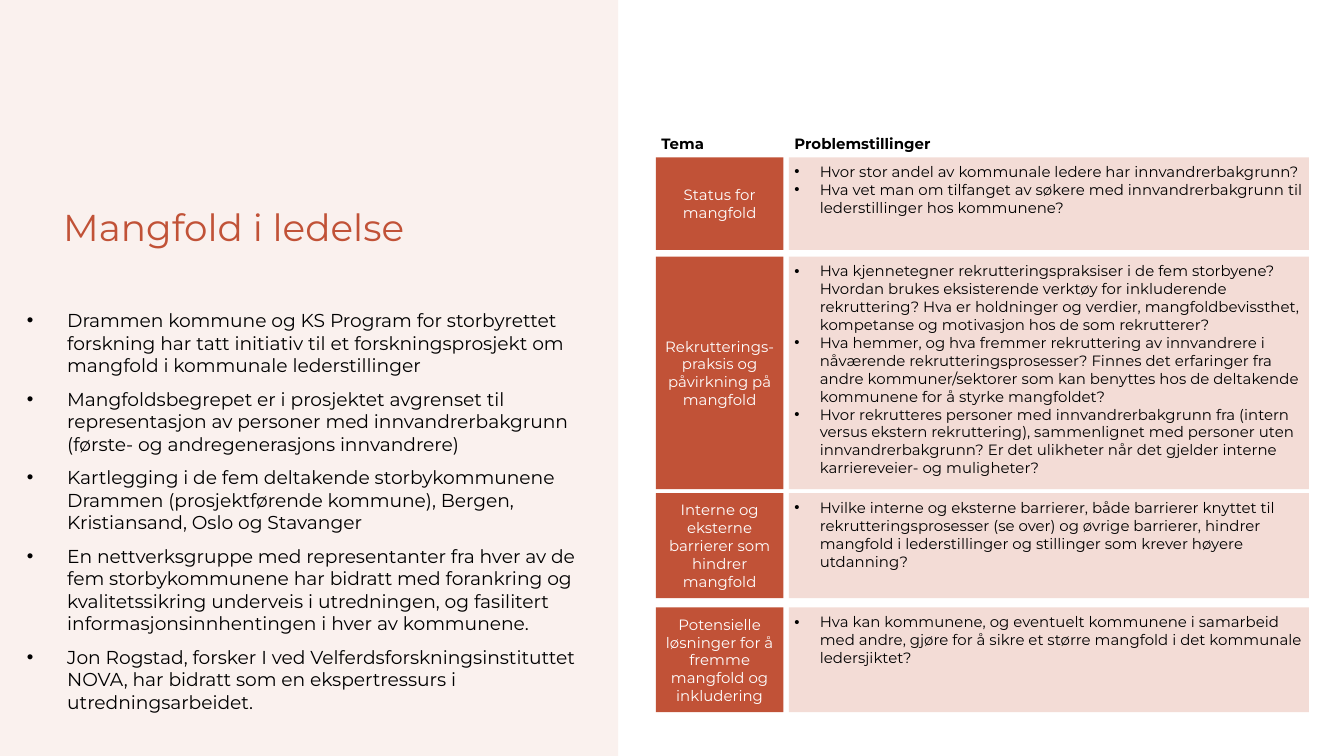
from lxml import etree
from pptx import Presentation
from pptx.dml.color import RGBColor
from pptx.enum.shapes import MSO_SHAPE
from pptx.enum.text import MSO_ANCHOR, PP_ALIGN
from pptx.oxml.ns import qn
from pptx.util import Inches, Pt

RECTANGLE = MSO_SHAPE.RECTANGLE
TOP, MIDDLE = MSO_ANCHOR.TOP, MSO_ANCHOR.MIDDLE
LEFT, CENTER = PP_ALIGN.LEFT, PP_ALIGN.CENTER
FONT = "Montserrat"
RUST, BLUSH, BLACK, WHITE = "C15237", "F3DCD6", "000000", "FFFFFF"

TITLE = "Mangfold i ledelse"
POINTS = [
    "Drammen kommune og KS Program for storbyrettet forskning har tatt initiativ til et "
    "forskningsprosjekt om mangfold i kommunale lederstillinger",
    "Mangfoldsbegrepet er i prosjektet avgrenset til representasjon av personer med "
    "innvandrerbakgrunn (første- og andregenerasjons innvandrere)",
    "Kartlegging i de fem deltakende storbykommunene Drammen (prosjektførende kommune), "
    "Bergen, Kristiansand, Oslo og Stavanger",
    "En nettverksgruppe med representanter fra hver av de fem storbykommunene har bidratt "
    "med forankring og kvalitetssikring underveis i utredningen, og fasilitert "
    "informasjonsinnhentingen i hver av kommunene.",
    "Jon Rogstad, forsker I ved Velferdsforskningsinstituttet NOVA, har bidratt som en "
    "ekspertressurs i utredningsarbeidet.",
]
HEADINGS = ["Tema", "Problemstillinger"]
# Each row: offset from the top of the matrix, height, theme, questions.
THEMES = [
    (0.2, 0.69, "Status for mangfold", [
        "Hvor stor andel av kommunale ledere har innvandrerbakgrunn?",
        "Hva vet man om tilfanget av søkere med innvandrerbakgrunn til lederstillinger "
        "hos kommunene?",
    ]),
    (0.94, 1.73, "Rekrutterings-praksis og påvirkning på mangfold", [
        "Hva kjennetegner rekrutteringspraksiser i de fem storbyene? Hvordan brukes "
        "eksisterende verktøy for inkluderende rekruttering? Hva er holdninger og verdier, "
        "mangfoldbevissthet, kompetanse og motivasjon hos de som rekrutterer?",
        "Hva hemmer, og hva fremmer rekruttering av innvandrere i nåværende "
        "rekrutteringsprosesser? Finnes det erfaringer fra andre kommuner/sektorer som kan "
        "benyttes hos de deltakende kommunene for å styrke mangfoldet?",
        "Hvor rekrutteres personer med innvandrerbakgrunn fra (intern versus ekstern "
        "rekruttering), sammenlignet med personer uten innvandrerbakgrunn? Er det ulikheter "
        "når det gjelder interne karriereveier- og muligheter?",
    ]),
    (2.7, 0.78, "Interne og eksterne barrierer som hindrer mangfold", [
        "Hvilke interne og eksterne barrierer, både barrierer knyttet til "
        "rekrutteringsprosesser (se over) og øvrige barrierer, hindrer mangfold i "
        "lederstillinger og stillinger som krever høyere utdanning?",
    ]),
    (3.55, 0.78, "Potensielle løsninger for å fremme mangfold og inkludering", [
        "Hva kan kommunene, og eventuelt kommunene i samarbeid med andre, gjøre for å sikre "
        "et større mangfold i det kommunale ledersjiktet?",
    ]),
]


def rgb(value):
    return RGBColor.from_string(value)


def add_box(shapes, left, top, width, height, fill=None):
    """Add a filled rectangle, or a text box when no fill is given."""
    place = [Inches(value) for value in (left, top, width, height)]
    if fill is None:
        return shapes.add_textbox(*place)
    shape = shapes.add_shape(RECTANGLE, *place)
    shape.shadow.inherit = False
    shape.fill.solid()
    shape.fill.fore_color.rgb = rgb(fill)
    shape.line.fill.background()
    return shape


def set_bullet(paragraph, indent):
    properties = paragraph._p.get_or_add_pPr()
    properties.set("marL", str(Inches(indent)))
    properties.set("indent", str(-Inches(indent)))
    etree.SubElement(properties, qn("a:buFont")).set("typeface", "Arial")
    etree.SubElement(properties, qn("a:buChar")).set("char", "•")


def write(shape, texts, size, color=BLACK, bold=False, anchor=TOP, align=LEFT,
          inset=0.04, indent=None, gap=0):
    """Write one paragraph per text; an indent makes them bullets."""
    frame = shape.text_frame
    frame.word_wrap = True
    frame.vertical_anchor = anchor
    frame.margin_left = frame.margin_right = Inches(inset)
    frame.margin_top = frame.margin_bottom = Inches(inset)
    for index, text in enumerate(texts):
        paragraph = frame.add_paragraph() if index else frame.paragraphs[0]
        paragraph.alignment = align
        if indent:
            set_bullet(paragraph, indent)
        if index and gap:
            paragraph.space_before = Pt(gap)
        run = paragraph.add_run()
        run.text = text
        run.font.name = FONT
        run.font.size = Pt(size)
        run.font.bold = bold
        run.font.color.rgb = rgb(color)
    return frame


def add_introduction(slide, left, top, width, height):
    """Place the title and points on a tinted panel that bleeds off the slide."""
    panel = add_box(slide.shapes, left, top, width, height, BLUSH)
    color = panel.fill._xPr.find(qn("a:solidFill"))[0]
    etree.SubElement(color, qn("a:alpha")).set("val", "40000")

    title = add_box(slide.shapes, left + 0.5, top + 1.95, 2.97, 0.96)
    frame = write(title, [TITLE], 20, RUST, inset=0)
    frame.margin_top = Inches(0.36)
    frame.paragraphs[0].line_spacing = Pt(26)

    body = add_box(slide.shapes, left + 0.23, top + 3.12, 4.28, 3)
    write(body, POINTS, 10, inset=0, indent=0.3, gap=6)


def add_theme_matrix(slide, left, top, width):
    shapes = slide.shapes.add_group_shape().shapes
    theme_width, gap = 0.95, 0.04
    question_left = left + theme_width + gap
    question_width = width - theme_width - gap
    columns = [(left, theme_width), (question_left, question_width)]
    for heading, (column_left, column_width) in zip(HEADINGS, columns):
        box = add_box(shapes, column_left, top, min(column_width, 1.92), 0.2)
        write(box, [heading], 8, bold=True, anchor=MIDDLE)
    for offset, height, theme, questions in THEMES:
        label = add_box(shapes, left, top + offset, theme_width, height, RUST)
        write(label, [theme], 8, WHITE, anchor=MIDDLE, align=CENTER)
        panel = add_box(shapes, question_left, top + offset, question_width, height, BLUSH)
        write(panel, questions, 8, indent=0.19)


def main():
    presentation = Presentation()
    presentation.slide_width = Inches(10)
    presentation.slide_height = presentation.slide_width * 9 // 16
    slide = presentation.slides.add_slide(presentation.slide_layouts[6])
    add_introduction(slide, -0.03, -0.82, 4.63, 6.54)
    add_theme_matrix(slide, 4.88, 0.97, 4.86)
    presentation.save("out.pptx")


if __name__ == "__main__":
    main()
